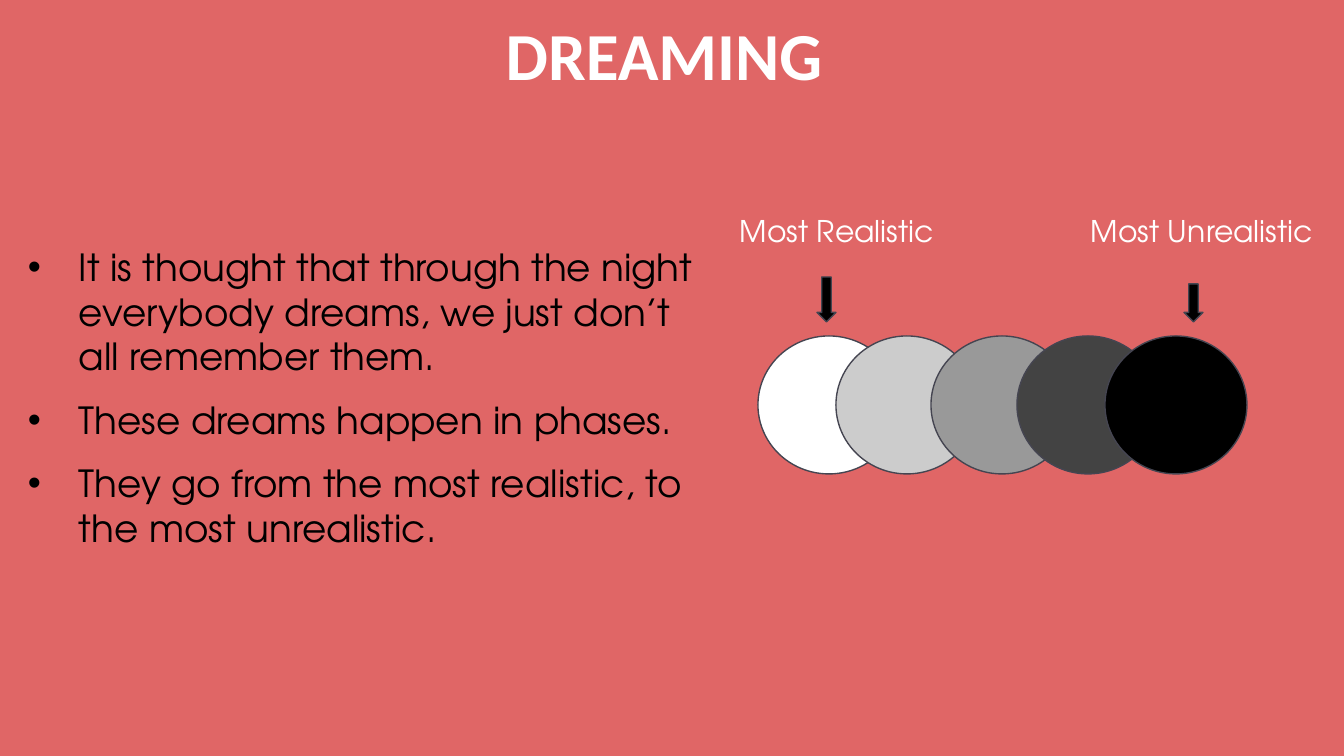
from dataclasses import dataclass

import lxml.etree
import pptx
import pptx.dml.color
import pptx.enum.shapes
import pptx.enum.text
import pptx.oxml.ns
import pptx.util

EMU_PER_PX = 914400 / 134.4
SLIDE_WIDTH, SLIDE_HEIGHT = 1344, 756
INSET = 13
BODY_FONT = "TeX Gyre Adventor"
RED, WHITE, BLACK, OUTLINE = "E06666", "FFFFFF", "000000", "454551"
SHAPE_TYPE = pptx.enum.shapes.MSO_SHAPE


@dataclass(frozen=True)
class Box:
    left: int
    top: int
    width: int
    height: int


@dataclass(frozen=True)
class Figure:
    kind: SHAPE_TYPE
    box: Box
    fill: str


BULLETS = [
    "It is thought that through the night everybody dreams, we just don’t all remember them.",
    "These dreams happen in phases.",
    "They go from the most realistic, to the most unrealistic.",
]
PHASES = [(758, WHITE), (836, "CCCCCC"), (931, "999999"), (1017, "434343"), (1105, BLACK)]
CIRCLES = [Figure(SHAPE_TYPE.OVAL, Box(left, 336, 142, 138), fill) for left, fill in PHASES]
ARROWS = [
    Figure(SHAPE_TYPE.DOWN_ARROW, Box(817, 277, 19, 45), BLACK),
    Figure(SHAPE_TYPE.DOWN_ARROW, Box(1184, 284, 19, 38), BLACK),
]


def px(length: int) -> pptx.util.Emu:
    return pptx.util.Emu(round(length * EMU_PER_PX))


def color(value: str) -> pptx.dml.color.RGBColor:
    return pptx.dml.color.RGBColor.from_string(value)


def place(shape, box: Box) -> None:
    shape.left, shape.top = px(box.left), px(box.top)
    shape.width, shape.height = px(box.width), px(box.height)


def set_up_frame(shape, top: int = INSET, right: int = INSET):
    frame = shape.text_frame
    frame.word_wrap = True
    frame.auto_size = pptx.enum.text.MSO_AUTO_SIZE.NONE
    frame.vertical_anchor = pptx.enum.text.MSO_ANCHOR.TOP
    frame.margin_left = frame.margin_bottom = px(INSET)
    frame.margin_top, frame.margin_right = px(top), px(right)
    return frame


def format_runs(paragraph, font: str, size: int, hex_color: str, bold: bool = False) -> None:
    for run in paragraph.runs:
        run.font.name, run.font.size, run.font.bold = font, pptx.util.Pt(size), bold
        run.font.color.rgb = color(hex_color)


def add_child(parent, tag: str, **attributes: str):
    return lxml.etree.SubElement(parent, pptx.oxml.ns.qn(tag), attributes)


def add_bullet(paragraph) -> None:
    properties = paragraph._p.get_or_add_pPr()
    properties.set("marL", str(px(66)))
    properties.set("indent", str(px(-51)))
    add_child(add_child(properties, "a:buClr"), "a:srgbClr", val=BLACK)
    add_child(properties, "a:buFont", typeface="Arial")
    add_child(properties, "a:buChar", char="•")


def draw_title(slide) -> None:
    title = slide.shapes.title
    place(title, Box(0, 0, SLIDE_WIDTH, SLIDE_HEIGHT))
    title.fill.solid()
    title.fill.fore_color.rgb = color(RED)
    frame = set_up_frame(title, right=INSET + 16)
    frame.text = "DREAMING"
    paragraph = frame.paragraphs[0]
    paragraph.alignment = pptx.enum.text.PP_ALIGN.CENTER
    format_runs(paragraph, "Calibri", 36, WHITE, bold=True)


def draw_bullets(slide) -> None:
    body = slide.placeholders[1]
    place(body, Box(0, 169, 727, 586))
    frame = set_up_frame(body, top=75)
    frame.text = "\n".join(BULLETS)
    for index, paragraph in enumerate(frame.paragraphs):
        paragraph.space_before = pptx.util.Pt(10 if index else 0)
        add_bullet(paragraph)
        format_runs(paragraph, BODY_FONT, 20, BLACK)


def draw_figure(slide, figure: Figure) -> None:
    box = figure.box
    shape = slide.shapes.add_shape(
        figure.kind, px(box.left), px(box.top), px(box.width), px(box.height))
    shape.shadow.inherit = False
    shape.fill.solid()
    shape.fill.fore_color.rgb = color(figure.fill)
    shape.line.color.rgb = color(OUTLINE)
    shape.line.width = pptx.util.Pt(0.75)


def draw_labels(slide) -> None:
    labels = slide.shapes.add_textbox(px(727), px(200), px(617), px(64))
    frame = set_up_frame(labels)
    frame.text = "Most Realistic\tMost Unrealistic"
    paragraph = frame.paragraphs[0]
    format_runs(paragraph, BODY_FONT, 16, WHITE)
    # The second label starts at a tab stop
    tabs = add_child(paragraph._p.get_or_add_pPr(), "a:tabLst")
    add_child(tabs, "a:tab", pos=str(px(351)), algn="l")


def main() -> None:
    presentation = pptx.Presentation()
    presentation.slide_width, presentation.slide_height = px(SLIDE_WIDTH), px(SLIDE_HEIGHT)
    slide = presentation.slides.add_slide(presentation.slide_layouts[1])

    # Title and list
    draw_title(slide)
    draw_bullets(slide)

    # Scale from realistic to unrealistic
    for circle in CIRCLES:
        draw_figure(slide, circle)
    draw_labels(slide)
    for arrow in ARROWS:
        draw_figure(slide, arrow)

    presentation.save("out.pptx")


if __name__ == "__main__":
    main()
